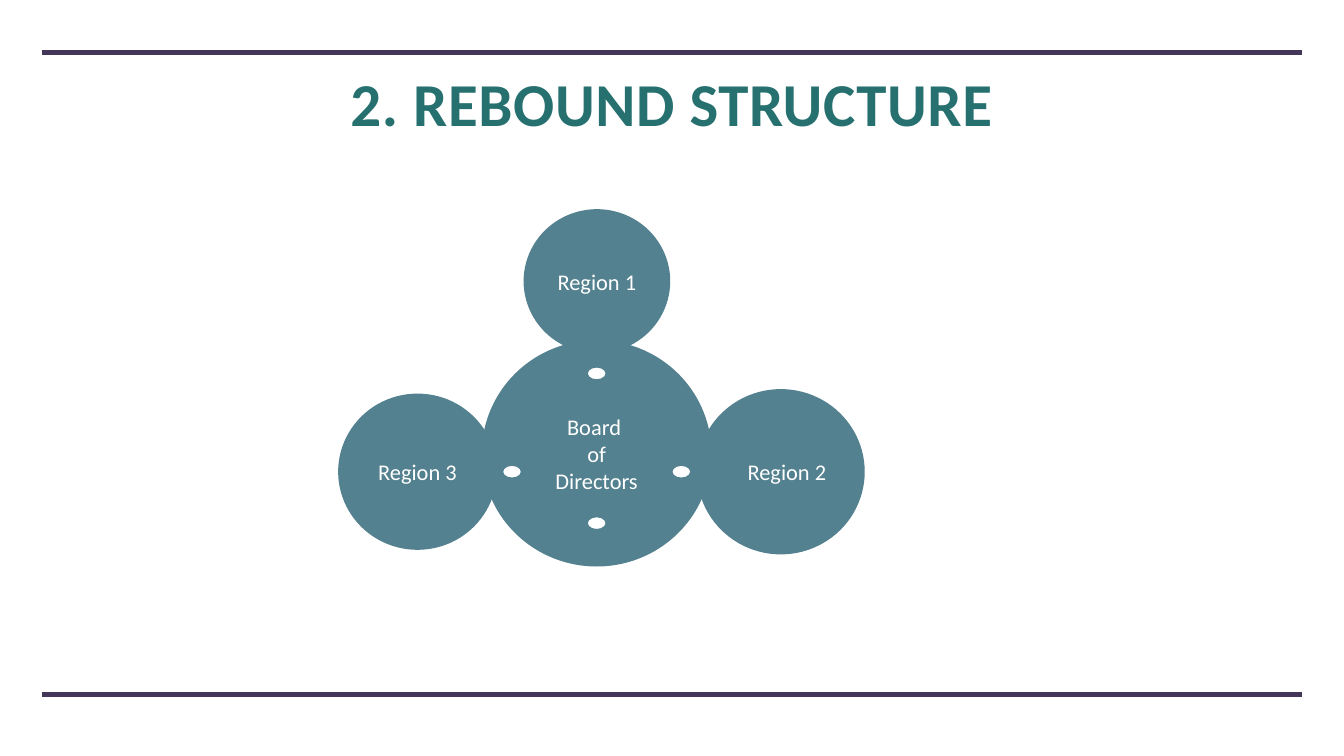
from dataclasses import dataclass

from lxml import etree
from pptx import Presentation
from pptx.dml.color import RGBColor
from pptx.enum.shapes import MSO_CONNECTOR, MSO_SHAPE
from pptx.enum.text import MSO_ANCHOR, PP_ALIGN
from pptx.oxml.ns import qn
from pptx.util import Inches, Pt

CENTER = PP_ALIGN.CENTER
TOP, MIDDLE = MSO_ANCHOR.TOP, MSO_ANCHOR.MIDDLE
OVAL = MSO_SHAPE.OVAL
STRAIGHT = MSO_CONNECTOR.STRAIGHT


@dataclass(frozen=True)
class Theme:
    font: str = "Calibri"
    rule: str = "443658"
    title: str = "26706F"
    circle: str = "54818F"
    white: str = "FFFFFF"
    title_size: int = 87
    label_size: int = 32
    rule_width: int = 6
    dot_line: int = 2
    inset: float = 0.06


THEME = Theme()


def rgb(value):
    return RGBColor.from_string(value)


def write_text(tf, text, *, size, color, bold=False, anchor=MIDDLE, line_spacing=None, tracking=None):
    tf.word_wrap = True
    tf.vertical_anchor = anchor
    tf.margin_left = tf.margin_right = tf.margin_top = tf.margin_bottom = Inches(THEME.inset)
    for i, line in enumerate(text.split("\n")):
        p = tf.paragraphs[0] if i == 0 else tf.add_paragraph()
        p.alignment = CENTER
        p.line_spacing = line_spacing
        r = p.add_run()
        r.text = line
        r.font.name = THEME.font
        r.font.size = Pt(size)
        r.font.bold = bold
        r.font.color.rgb = rgb(color)
        if tracking:
            r.font._element.set("spc", str(tracking * 100))


def add_oval(shapes, box, fill, line=None):
    sp = shapes.add_shape(OVAL, *map(Inches, box))
    sp.shadow.inherit = False
    sp.fill.solid()
    sp.fill.fore_color.rgb = rgb(fill)
    if line:
        sp.line.color.rgb = rgb(line)
        sp.line.width = Pt(THEME.dot_line)
    else:
        sp.line.fill.background()


def add_rule(s, left, right, y):
    line = s.shapes.add_connector(STRAIGHT, Inches(left), Inches(y), Inches(right), Inches(y))
    line.line.color.rgb = rgb(THEME.rule)
    line.line.width = Pt(THEME.rule_width)
    etree.SubElement(line._element.spPr, qn("a:effectLst"))


def add_title(s, box, text):
    title = s.shapes.title
    title.left, title.top, title.width, title.height = map(Inches, box)
    write_text(title.text_frame, text, size=THEME.title_size, color=THEME.title,
               bold=True, anchor=TOP, line_spacing=0.9, tracking=1)


def add_circle(s, box, text, label_size, shift=(0, 0)):
    left, top, width, height = box
    label_w, label_h = label_size
    dx, dy = shift
    label_box = (left + (width - label_w) / 2 + dx, top + (height - label_h) / 2 + dy,
                 label_w, label_h)
    group = s.shapes.add_group_shape()
    add_oval(group.shapes, box, THEME.circle)
    label = group.shapes.add_textbox(*map(Inches, label_box))
    write_text(label.text_frame, text, size=THEME.label_size, color=THEME.white)


def add_dots(s, box):
    left, top, width, height = box
    dot_w, dot_h = 0.38, 0.26
    center_x = left + width / 2
    side_y = top + 2.61
    centers = [(center_x + 1.68, side_y), (center_x - 1.68, side_y),
               (center_x, top + 0.66), (center_x, top + height - 0.86)]
    for x, y in centers:
        add_oval(s.shapes, (x - dot_w / 2, y - dot_h / 2, dot_w, dot_h),
                 THEME.white, THEME.circle)


def add_structure(s, box):
    x, y, width, height = box
    board = (x + 2.85, y + 2.6, 4.56, 4.49)
    add_circle(s, board, "Board \nof\nDirectors", (3.23, 1.86))
    add_circle(s, (x + 3.68, y, 2.91, 2.86), "Region 1", (2.05, 0.69))
    add_circle(s, (x, y + 3.66, 3.15, 3.1), "Region 3", (2.23, 0.69))
    add_circle(s, (x + width - 3.33, y + 3.57, 3.33, 3.28), "Region 2", (2.62, 0.69), (0.12, 0))
    add_dots(s, board)


def main():
    prs = Presentation()
    prs.slide_width, prs.slide_height = Inches(26.67), Inches(15)
    s = prs.slides.add_slide(prs.slide_layouts[5])
    s.background.fill.solid()
    s.background.fill.fore_color.rgb = rgb(THEME.white)
    for y in (1.04, 13.78):
        add_rule(s, 0.83, 25.83, y)
    add_title(s, (2.28, 1.4, 22.1, 1.81), "2. REBOUND STRUCTURE")
    add_structure(s, (6.71, 4.15, 10.45, 7.09))
    prs.save("out.pptx")


if __name__ == "__main__":
    main()
